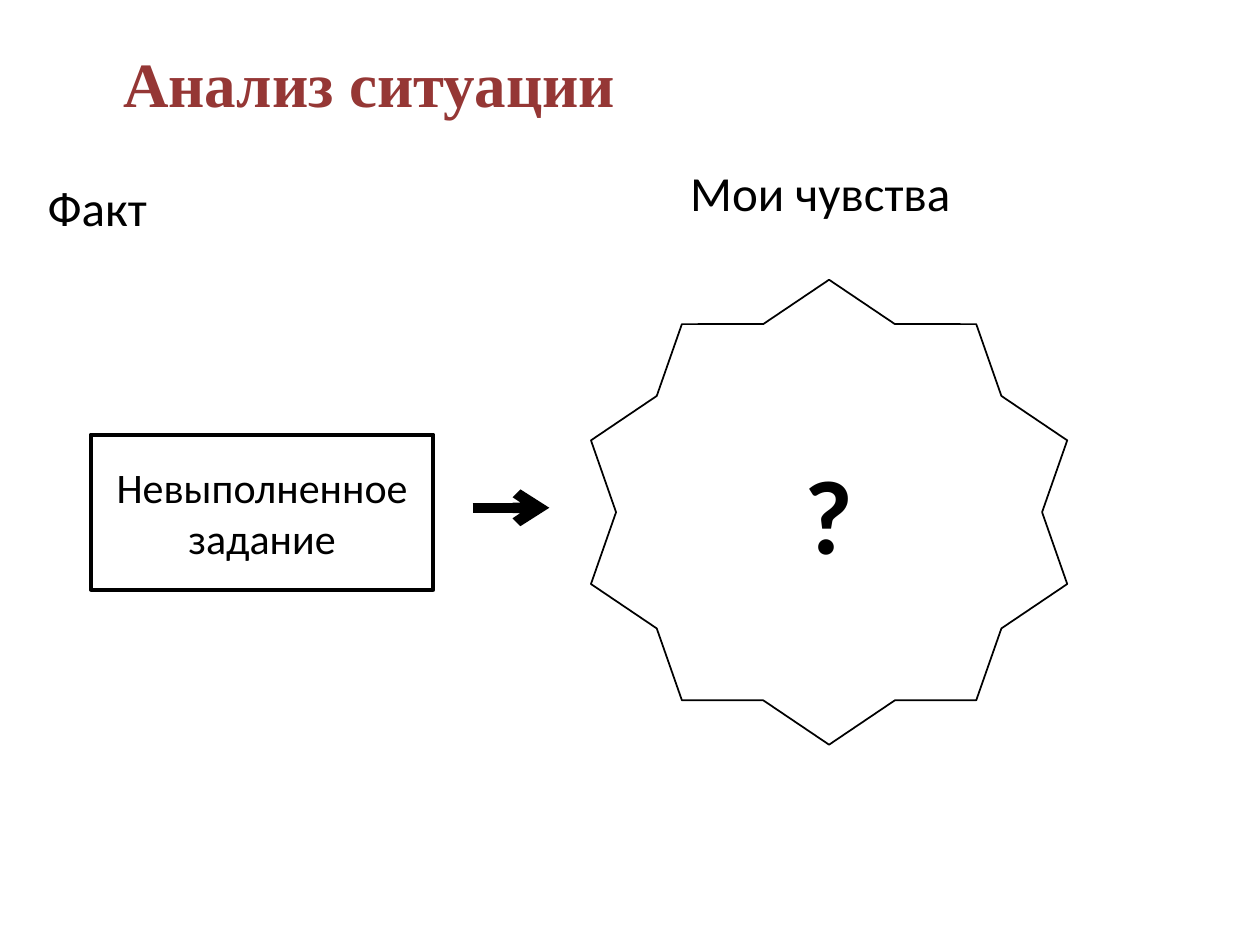
from lxml import etree
from pptx import Presentation
from pptx.dml.color import RGBColor
from pptx.enum.shapes import MSO_CONNECTOR, MSO_SHAPE
from pptx.enum.text import MSO_ANCHOR, PP_ALIGN
from pptx.oxml.ns import qn
from pptx.util import Inches, Pt

STRAIGHT = MSO_CONNECTOR.STRAIGHT
RECTANGLE, STAR = MSO_SHAPE.RECTANGLE, MSO_SHAPE.STAR_10_POINT
LEFT, CENTER = PP_ALIGN.LEFT, PP_ALIGN.CENTER
TOP, MIDDLE = MSO_ANCHOR.TOP, MSO_ANCHOR.MIDDLE

COLORS = {"title": "953735", "ink": "000000", "paper": "FFFFFF"}
TITLE = ("Анализ ситуации", (0.49, 0.3, 4.88, 0.71))
HEADINGS = [
    ("Факт", (0.28, 1.36, 2.44, 0.57)),
    ("Мои чувства", (5.38, 1.24, 2.76, 0.57)),
]
FIGURES = [
    ("Невыполненное задание", RECTANGLE, (0.72, 3.45, 2.72, 1.23), 2.25, 24, False),
    ("?", STAR, (4.69, 2.22, 3.78, 3.69), 1, 60, True),
]
ARROW = (3.75, 4.03, 4.36, 4.03)


def color(name):
    return RGBColor.from_string(COLORS[name])


def inches(values):
    return [Inches(v) for v in values]


def write(sp, text, size, align, anchor, bold=False, font="Calibri", ink="ink"):
    tf = sp.text_frame
    tf.word_wrap = True
    tf.vertical_anchor = anchor
    p = tf.paragraphs[0]
    p.text = text
    p.alignment = align
    p.font.name = font
    p.font.size = Pt(size)
    p.font.bold = bold
    p.font.color.rgb = color(ink)


prs = Presentation()
prs.slide_width, prs.slide_height = inches((10, 7.5))
s = prs.slides.add_slide(prs.slide_layouts[5])

text, box = TITLE
title = s.shapes.title
title.left, title.top, title.width, title.height = inches(box)
write(title, text, 36, CENTER, TOP, True, "Times New Roman", "title")

for text, box in HEADINGS:
    write(s.shapes.add_textbox(*inches(box)), text, 28, LEFT, TOP)

for text, kind, box, width, size, bold in FIGURES:
    sp = s.shapes.add_shape(kind, *inches(box))
    sp.shadow.inherit = False
    sp.fill.solid()
    sp.fill.fore_color.rgb = color("paper")
    sp.line.color.rgb = color("ink")
    sp.line.width = Pt(width)
    write(sp, text, size, CENTER, MIDDLE, bold)

arrow = s.shapes.add_connector(STRAIGHT, *inches(ARROW))
arrow.line.color.rgb = color("ink")
arrow.line.width = Pt(6)
etree.SubElement(arrow.line._get_or_add_ln(), qn("a:tailEnd"), type="arrow")
etree.SubElement(arrow._element.spPr, qn("a:effectLst"))

prs.save("out.pptx")
